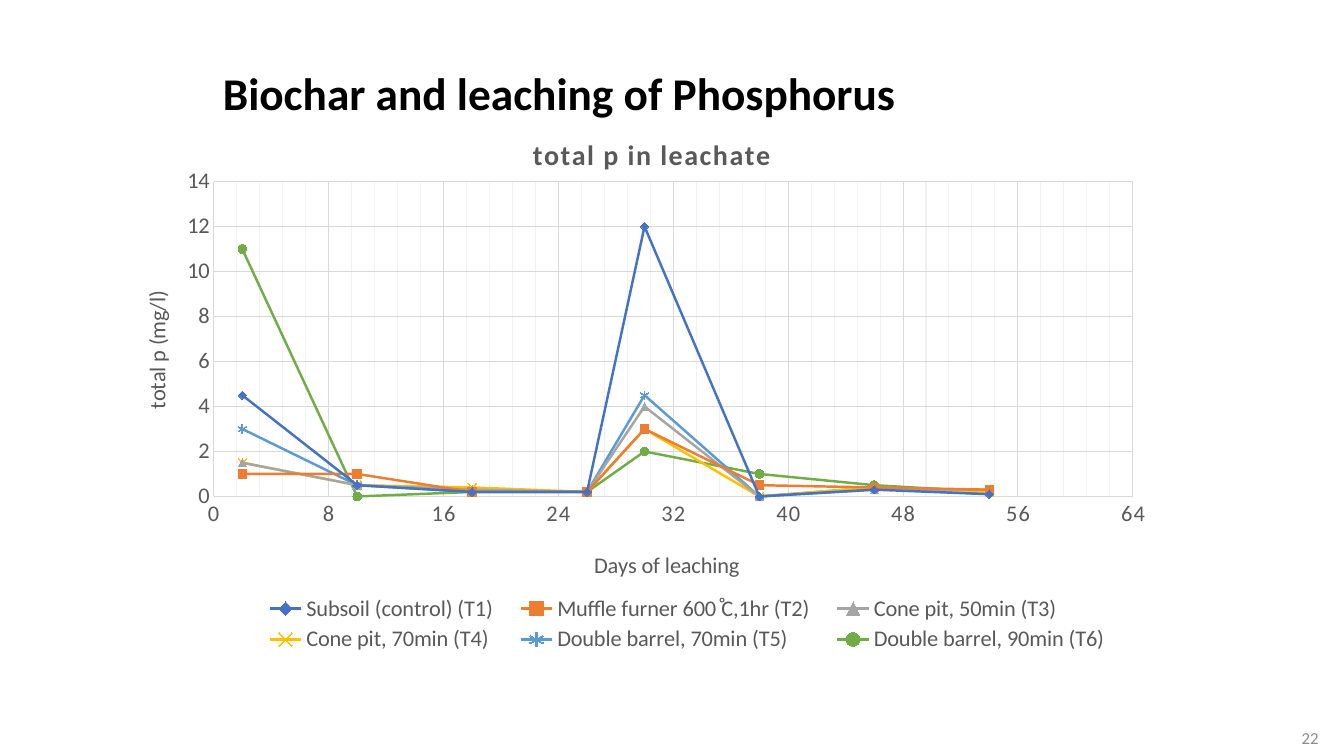
from pptx import Presentation
from pptx.chart.data import XyChartData
from pptx.dml.color import RGBColor
from pptx.enum import chart as c, text as t
from pptx.oxml import parse_xml
from pptx.oxml.ns import nsdecls
from pptx.util import Pt

FONT, GREY, GRID, MINOR_GRID = "Calibri", "595959", "D9D9D9", "F2F2F2"
TITLE = "Biochar and leaching of Phosphorus"
PAGE_NUMBER = "22"
DAYS = [2, 10, 18, 26, 30, 38, 46, 54]
MARKER = c.XL_MARKER_STYLE
# name, colour, marker, marker is filled, total p (mg/l) per day
TREATMENTS = [
    ("Subsoil (control) (T1)", "4472C4", MARKER.DIAMOND, True,
     [4.5, 0.5, 0.2, 0.2, 12, 0, 0.3, 0.1]),
    ("Muffle furner 600 ̊C,1hr (T2)", "ED7D31", MARKER.SQUARE, True,
     [1, 1, 0.2, 0.2, 3, 0.5, 0.4, 0.3]),
    ("Cone pit, 50min (T3)", "A5A5A5", MARKER.TRIANGLE, True,
     [1.5, 0.5, 0.3, 0.2, 4, 0, 0.3, 0.3]),
    ("Cone pit, 70min (T4)", "FFC000", MARKER.X, False,
     [1.5, 0.5, 0.4, 0.2, 3, 0, 0.4, 0.2]),
    ("Double barrel, 70min (T5)", "5B9BD5", MARKER.STAR, False,
     [3, 0.5, 0.2, 0.2, 4.5, 0, 0.4, 0.1]),
    ("Double barrel, 90min (T6)", "70AD47", MARKER.CIRCLE, True,
     [11, 0, 0.2, 0.2, 2, 1, 0.5, 0.2]),
]


def rgb(value):
    return RGBColor.from_string(value)


def set_font(font, size, color, bold=False):
    font.name, font.size, font.bold = FONT, Pt(size), bold
    font.color.rgb = rgb(color)


def set_line(line, color, width=0.75):
    line.color.rgb = rgb(color)
    line.width = Pt(width)


def place(element, x, y, width=None, height=None, inner=False):
    """Give a chart part a manual layout, in fractions of the chart."""
    for old in element.xpath("./c:layout"):
        element.remove(old)
    values = [("layoutTarget", "inner")] if inner else []
    values += [("xMode", "edge"), ("yMode", "edge"), ("x", x), ("y", y)]
    if width:
        values += [("w", width), ("h", height)]
    body = "".join(f'<c:{tag} val="{value}"/>' for tag, value in values)
    layout = parse_xml(f'<c:layout {nsdecls("c")}><c:manualLayout>{body}'
                       '</c:manualLayout></c:layout>')
    overlay = element.xpath("./c:overlay")
    element.insert(element.index(overlay[0]) if overlay else 0, layout)


def write_title(title, wording, size, x, y, bold=False):
    frame = title.text_frame
    frame.text = wording
    set_font(frame.paragraphs[0].runs[0].font, size, GREY, bold)
    place(title.element, x, y)


def format_axis(axis, maximum, step, title, x, y):
    axis.minimum_scale, axis.maximum_scale, axis.major_unit = 0, maximum, step
    axis.major_tick_mark = axis.minor_tick_mark = c.XL_TICK_MARK.NONE
    axis.has_major_gridlines = True
    set_line(axis.major_gridlines.format.line, GRID)
    set_line(axis.format.line, GRID)
    set_font(axis.tick_labels.font, 16, GREY)
    axis.tick_labels.number_format = "General"
    axis.tick_labels.number_format_is_linked = False
    axis.has_title = True
    write_title(axis.axis_title, title, 16, x, y)


def add_leachate_chart(slide):
    data = XyChartData()
    for name, _, _, _, values in TREATMENTS:
        series = data.add_series(name)
        for day, value in zip(DAYS, values):
            series.add_data_point(day, value)
    chart = slide.shapes.add_chart(
        c.XL_CHART_TYPE.XY_SCATTER_LINES, Pt(87.8), Pt(74.9), Pt(753.1), Pt(406.1),
        data).chart
    set_font(chart.font, 10, "000000")
    plot = chart.plots[0]
    plot.vary_by_categories = False
    place(chart.element.xpath(".//c:plotArea")[0], 0.086, 0.135, 0.872, 0.554, True)

    for series, (_, color, marker, filled, _) in zip(plot.series, TREATMENTS):
        set_line(series.format.line, color, 1.75)
        series.marker.style, series.marker.size = marker, 6
        set_line(series.marker.format.line, color)
        fill = series.marker.format.fill
        if filled:
            fill.solid()
            fill.fore_color.rgb = rgb(color)
        else:
            fill.background()

    chart.has_title = True
    write_title(chart.chart_title, "total p in leachate", 20, 0.384, 0.044, True)
    days, phosphorus = chart.category_axis, chart.value_axis
    format_axis(days, 64, 8, "Days of leaching", 0.443, 0.775)
    format_axis(phosphorus, 14, 2, "total p (mg/l)", 0.014, 0.32)
    phosphorus.axis_title.element.xpath(".//a:bodyPr")[0].set("rot", "-5400000")
    days.minor_unit = 1.6
    days.has_minor_gridlines = True
    days_element = chart.element.xpath(".//c:valAx")[0]
    days_element.xpath("./c:minorGridlines")[0].append(parse_xml(
        f'<c:spPr {nsdecls("c", "a")}><a:ln w="{Pt(0.75)}"><a:solidFill>'
        f'<a:srgbClr val="{MINOR_GRID}"/></a:solidFill></a:ln></c:spPr>'))
    for properties in (chart.chart_title.element.xpath(".//a:rPr")
                       + days_element.xpath("./c:txPr//a:defRPr")):
        properties.set("spc", "100")

    chart.has_legend = True
    chart.legend.position = c.XL_LEGEND_POSITION.TOP
    chart.legend.include_in_layout = False
    set_font(chart.legend.font, 16, GREY)
    place(chart.element.xpath(".//c:legend")[0], 0.12, 0.856, 0.83, 0.115)


def main():
    presentation = Presentation()
    presentation.slide_width, presentation.slide_height = Pt(960), Pt(540)
    slide = presentation.slides.add_slide(presentation.slide_layouts[5])

    title = slide.shapes.title
    title.left, title.top, title.width, title.height = Pt(152), Pt(31), Pt(742), Pt(51)
    title.text_frame.text = TITLE
    title.text_frame.vertical_anchor = t.MSO_ANCHOR.MIDDLE
    paragraph = title.text_frame.paragraphs[0]
    paragraph.alignment, paragraph.line_spacing = t.PP_ALIGN.LEFT, 1.5
    set_font(paragraph.font, 32.4, "000000", True)

    add_leachate_chart(slide)

    number = slide.shapes.add_textbox(Pt(733), Pt(512.6), Pt(216), Pt(28.8)).text_frame
    number.word_wrap = True
    number.vertical_anchor = t.MSO_ANCHOR.MIDDLE
    number.text = PAGE_NUMBER
    number.paragraphs[0].alignment = t.PP_ALIGN.RIGHT
    set_font(number.paragraphs[0].font, 12, "8C8C8C")

    presentation.save("out.pptx")


if __name__ == "__main__":
    main()
